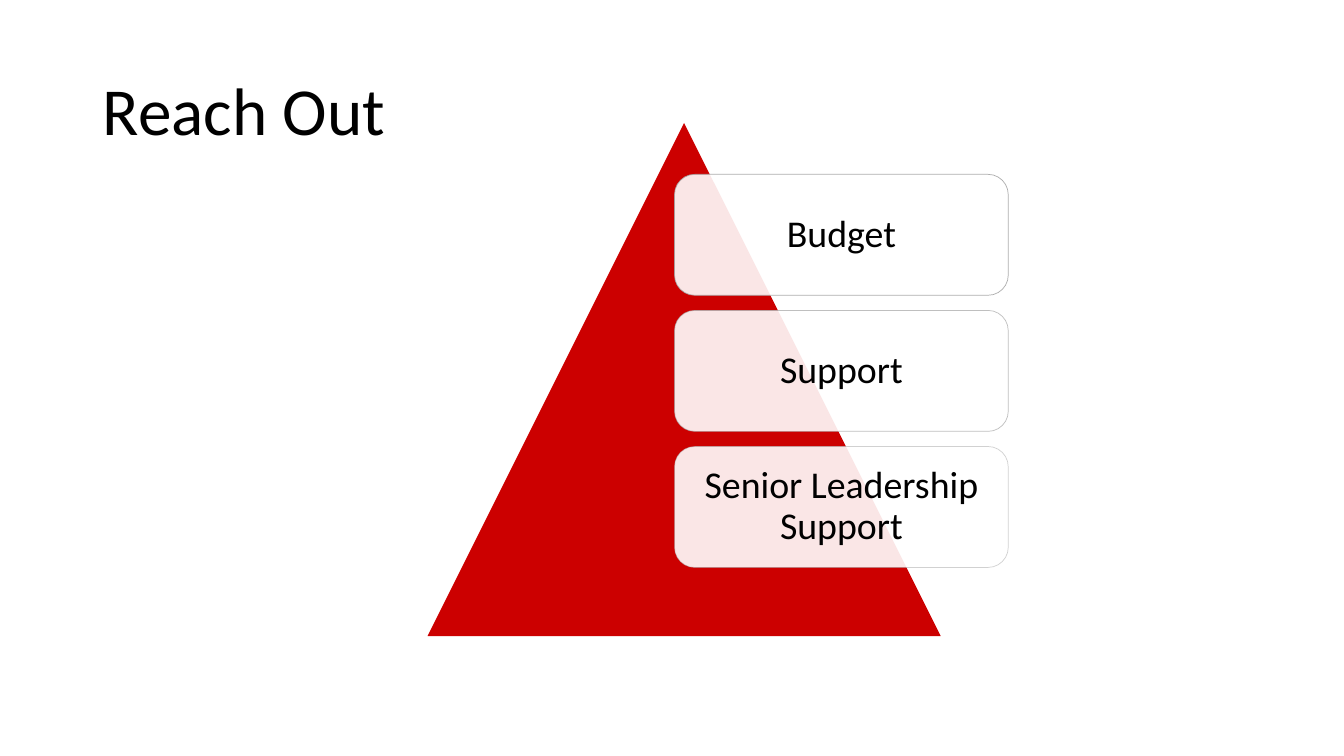
from lxml import etree
from pptx import Presentation
from pptx.dml.color import RGBColor
from pptx.enum.shapes import MSO_SHAPE
from pptx.enum.text import MSO_ANCHOR, MSO_AUTO_SIZE, PP_ALIGN
from pptx.oxml.ns import qn
from pptx.util import Inches, Pt

TITLE = "Reach Out"
CARDS = [("Budget", 90), ("Support", 70), ("Senior Leadership Support", 50)]

WIDE, HIGH = 13.33, 7.5
HEAD = (0.92, 0.4, 11.5, 1.45)
PEAK = (4.24, 1.22, 5.09, 5.09)
LEFT, TOP, CARD_W, CARD_H = 6.69, 1.73, 3.31, 1.2
STEP = CARD_H * 9 / 8
PAD = 0.17

FONT = "Calibri"
BLACK = RGBColor(0x00, 0x00, 0x00)
WHITE = RGBColor(0xFF, 0xFF, 0xFF)
RED = RGBColor(0xCC, 0x00, 0x00)
GRAY = RGBColor(0xA5, 0xA5, 0xA5)
TRIANGLE = MSO_SHAPE.ISOSCELES_TRIANGLE
ROUND = MSO_SHAPE.ROUNDED_RECTANGLE
MIDDLE = MSO_ANCHOR.MIDDLE
FIXED = MSO_AUTO_SIZE.NONE
FLUSH, CENTER = PP_ALIGN.LEFT, PP_ALIGN.CENTER


def write(shape, text, size, align):
    frame = shape.text_frame
    frame.text = text
    frame.word_wrap = True
    frame.auto_size = FIXED
    frame.vertical_anchor = MIDDLE
    para = frame.paragraphs[0]
    para.alignment = align
    para.line_spacing = 0.9
    para.space_before = Pt(0)
    para.font.name = FONT
    para.font.size = Pt(size)
    para.font.color.rgb = BLACK


def add(slide, kind, box, color):
    shape = slide.shapes.add_shape(kind, *map(Inches, box))
    shape.shadow.inherit = False
    shape.fill.solid()
    shape.fill.fore_color.rgb = color
    return shape


def fade(node, share):
    color = node.find(qn("a:solidFill")).find(qn("a:srgbClr"))
    etree.SubElement(color, qn("a:alpha")).set("val", str(share * 1000))


def add_card(slide, row, text, share):
    box = (LEFT, TOP + row * STEP, CARD_W, CARD_H)
    card = add(slide, ROUND, box, WHITE)
    card.line.color.rgb = GRAY
    card.line.width = Pt(0.5)
    props = card.element.spPr
    fade(props, 90)
    fade(props.find(qn("a:ln")), share)
    frame = card.text_frame
    frame.margin_left = frame.margin_right = Inches(PAD)
    frame.margin_top = frame.margin_bottom = Inches(PAD)
    write(card, text, 27, CENTER)


def main():
    deck = Presentation()
    deck.slide_width, deck.slide_height = Inches(WIDE), Inches(HIGH)
    slide = deck.slides.add_slide(deck.slide_layouts[5])
    title = slide.shapes.title
    title.left, title.top, title.width, title.height = map(Inches, HEAD)
    write(title, TITLE, 48, FLUSH)
    peak = add(slide, TRIANGLE, PEAK, RED)
    peak.line.fill.background()
    for row, (text, share) in enumerate(CARDS):
        add_card(slide, row, text, share)
    deck.save("out.pptx")


if __name__ == "__main__":
    main()
